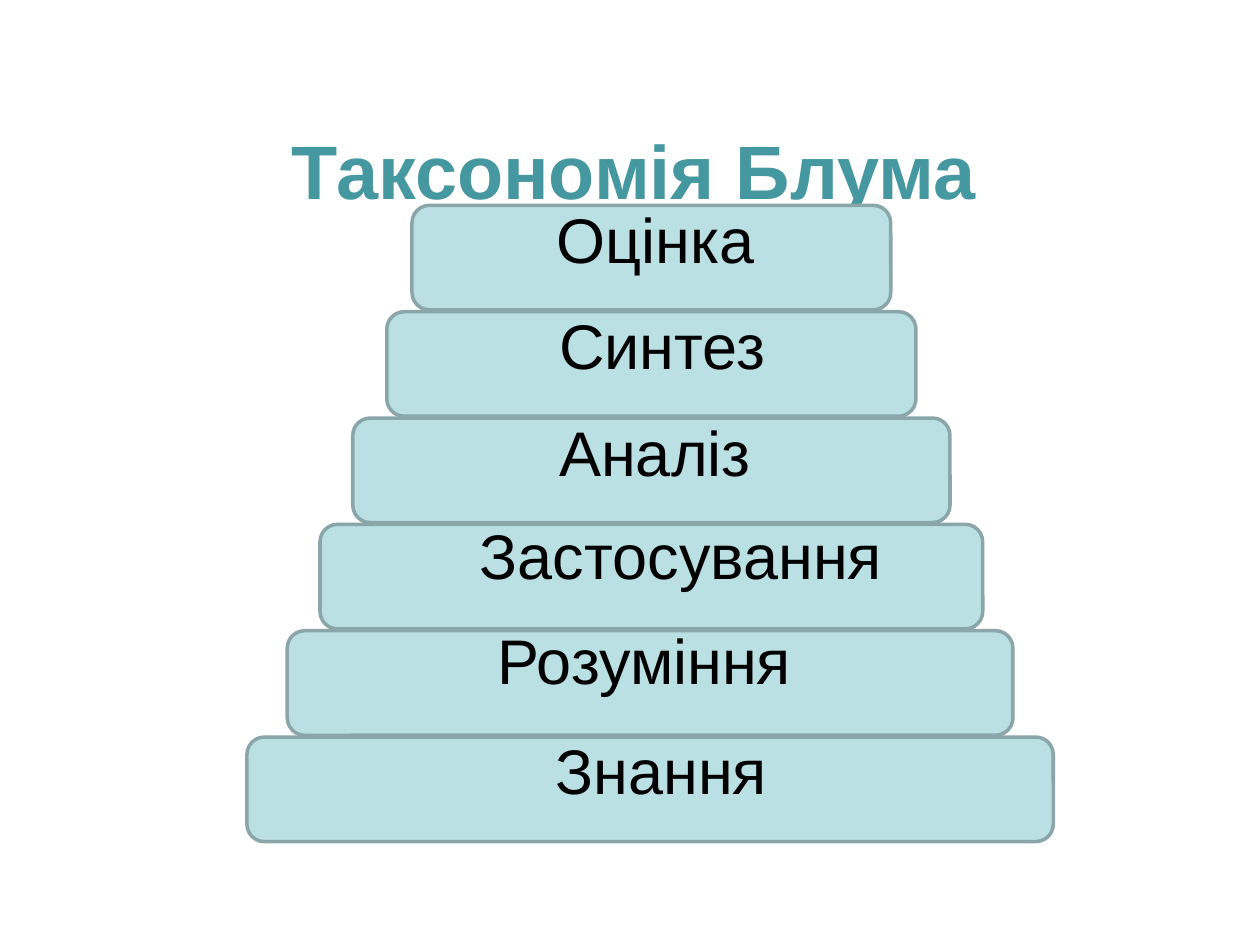
from pptx import Presentation
from pptx.dml.color import RGBColor
from pptx.enum.shapes import MSO_SHAPE
from pptx.enum.text import MSO_ANCHOR, MSO_AUTO_SIZE, PP_ALIGN
from pptx.util import Inches, Pt

COLORS = {"title": "4597A0", "fill": "BBE0E3", "line": "8AA6A8", "text": "000000"}
TITLE_FONT = {"name": "Arial", "size": Pt(43.2), "bold": True}
LABEL_FONT = {"name": "Arial", "size": Pt(36), "bold": False}
STEP_TOP, STEP_PITCH, STEP_HEIGHT = 1.63, 0.844, 0.83
LABEL_HEIGHT = 0.71

# label, step left, step width, label left, label top, label width
LEVELS = [
    ("Знання", 1.96, 6.4, 4.31, 5.76, 2.11),
    ("Розуміння", 2.28, 5.76, 3.85, 4.88, 2.71),
    ("Застосування", 2.54, 5.26, 3.71, 4.05, 3.65),
    ("Аналіз", 2.8, 4.74, 4.34, 3.23, 1.75),
    ("Синтез", 3.07, 4.2, 4.34, 2.38, 2),
    ("Оцінка", 3.27, 3.8, 4.32, 1.54, 1.78),
]


def rgb(key):
    return RGBColor.from_string(COLORS[key])


def format_font(font, values, color):
    for name, value in values.items():
        setattr(font, name, value)
    font.color.rgb = rgb(color)


def set_title(s, text):
    sp = s.shapes.title
    sp.left, sp.top, sp.width, sp.height = map(Inches, (0.72, 0.91, 8.62, 0.87))
    tf = sp.text_frame
    tf.vertical_anchor = MSO_ANCHOR.MIDDLE
    p = tf.paragraphs[0]
    p.alignment = PP_ALIGN.CENTER
    r = p.add_run()
    r.text = text
    format_font(r.font, TITLE_FONT, "title")


def add_step(s, left, top, width):
    box = map(Inches, (left, top, width, STEP_HEIGHT))
    sp = s.shapes.add_shape(MSO_SHAPE.ROUNDED_RECTANGLE, *box)
    sp.shadow.inherit = False
    sp.fill.solid()
    sp.fill.fore_color.rgb = rgb("fill")
    sp.line.color.rgb = rgb("line")
    sp.line.width = Pt(2)


def add_label(s, text, left, top, width):
    box = map(Inches, (left, top, width, LABEL_HEIGHT))
    tf = s.shapes.add_textbox(*box).text_frame
    tf.word_wrap = True
    tf.auto_size = MSO_AUTO_SIZE.SHAPE_TO_FIT_TEXT
    r = tf.paragraphs[0].add_run()
    r.text = text
    format_font(r.font, LABEL_FONT, "text")


def main():
    prs = Presentation()
    prs.slide_width, prs.slide_height = Inches(10), Inches(7.5)
    s = prs.slides.add_slide(prs.slide_layouts[5])
    set_title(s, "Таксономія Блума")
    last = len(LEVELS) - 1
    for i, (_, left, width, *_) in enumerate(LEVELS):
        add_step(s, left, STEP_TOP + (last - i) * STEP_PITCH, width)
    for text, _, _, left, top, width in LEVELS:
        add_label(s, text, left, top, width)
    prs.save("out.pptx")


if __name__ == "__main__":
    main()
